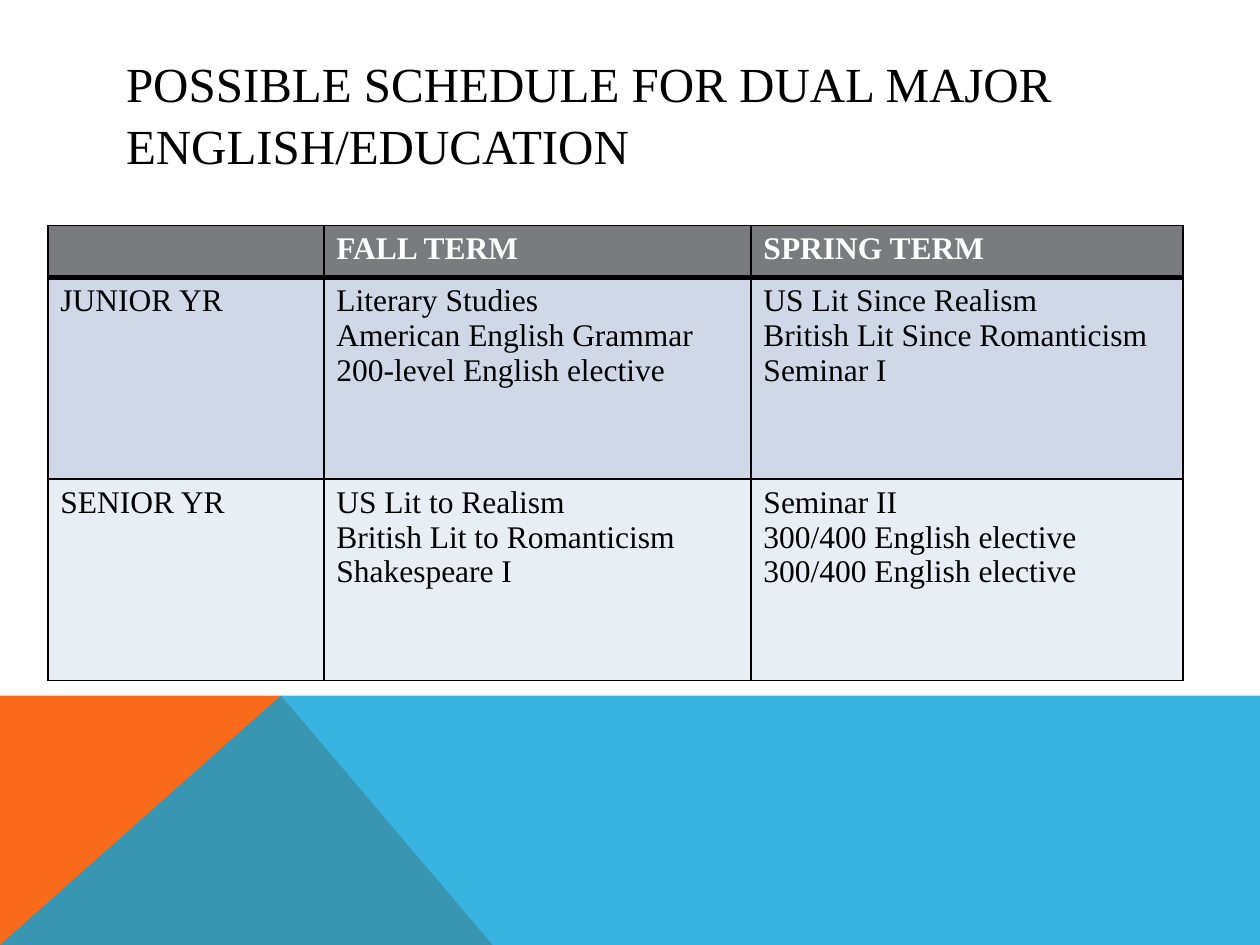
from lxml import etree
from pptx import Presentation
from pptx.dml.color import RGBColor
from pptx.enum.text import MSO_ANCHOR, PP_ALIGN
from pptx.oxml.ns import qn
from pptx.util import Inches, Pt

FONT = "Times New Roman"


def color(hex_string):
    return RGBColor.from_string(hex_string)


def format_text(text_frame, size, hex_string, bold=False):
    for paragraph in text_frame.paragraphs:
        for run in paragraph.runs:
            run.font.name = FONT
            run.font.size = Pt(size)
            run.font.bold = bold
            run.font.color.rgb = color(hex_string)


presentation = Presentation()
presentation.slide_width = Inches(10)
presentation.slide_height = Inches(7.5)
slide = presentation.slides.add_slide(presentation.slide_layouts[5])

# Bottom band: orange wedge under a translucent blue area
bands = [
    ("F96A1B", 100, [(0, 7.5), (0, 5.52), (2.23, 5.52), (3.91, 7.5)]),
    ("08A1D9", 80, [(0, 7.5), (2.23, 5.52), (10, 5.52), (10, 7.5)]),
]
for fill, opacity, points in bands:
    corners = [(Inches(x), Inches(y)) for x, y in points]
    builder = slide.shapes.build_freeform(*corners[0])
    builder.add_line_segments(corners[1:], close=True)
    shape = builder.convert_to_shape()
    shape.shadow.inherit = False
    shape.fill.solid()
    shape.fill.fore_color.rgb = color(fill)
    shape.line.fill.background()
    if opacity < 100:
        rgb = shape.fill._xPr.find(".//" + qn("a:srgbClr"))
        etree.SubElement(rgb, qn("a:alpha"), val=str(opacity * 1000))

# Title
title = slide.shapes.title
title.left, title.top = Inches(0.9), Inches(0.4)
title.width, title.height = Inches(8.22), Inches(0.99)
title.text_frame.text = "POSSIBLE SCHEDULE FOR DUAL MAJOR ENGLISH/EDUCATION"
title.text_frame.word_wrap = True
title.text_frame.vertical_anchor = MSO_ANCHOR.MIDDLE
title.text_frame.paragraphs[0].alignment = PP_ALIGN.LEFT
title.text_frame.paragraphs[0].line_spacing = 1.05
format_text(title.text_frame, 28, "000000")

# Schedule table
schedule = [
    ["", "FALL TERM", "SPRING TERM"],
    ["JUNIOR YR",
     "Literary Studies\nAmerican English Grammar\n200-level English elective",
     "US Lit Since Realism\nBritish Lit Since Romanticism\nSeminar I"],
    ["SENIOR YR",
     "US Lit to Realism\nBritish Lit to Romanticism\nShakespeare I",
     "Seminar II\n300/400 English elective\n300/400 English elective"],
]
column_widths = [2.19, 3.39, 3.43]
row_heights = [0.41, 1.6, 1.6]
row_fills = ["797B7E", "D0D8E8", "E9EDF4"]

table = slide.shapes.add_table(
    len(row_heights), len(column_widths), Inches(0.38), Inches(1.79),
    Inches(sum(column_widths)), Inches(sum(row_heights))).table
for column, width in zip(table.columns, column_widths):
    column.width = Inches(width)
for row, height in zip(table.rows, row_heights):
    row.height = Inches(height)

for row_index, texts in enumerate(schedule):
    is_header = row_index == 0
    for column_index, text in enumerate(texts):
        cell = table.cell(row_index, column_index)
        cell.text_frame.text = text
        format_text(cell.text_frame, 18, "FFFFFF" if is_header else "000000", is_header)

        # Borders go before the fill; the rule under the header is thick
        properties = cell._tc.get_or_add_tcPr()
        widths = {"lnL": 1, "lnR": 1,
                  "lnT": 3 if row_index == 1 else 1,
                  "lnB": 3 if is_header else 1}
        for side, width in widths.items():
            line = etree.SubElement(properties, qn("a:" + side), w=str(Pt(width)))
            line_fill = etree.SubElement(line, qn("a:solidFill"))
            etree.SubElement(line_fill, qn("a:srgbClr"), val="000000")
        cell.fill.solid()
        cell.fill.fore_color.rgb = color(row_fills[row_index])

presentation.save("out.pptx")
